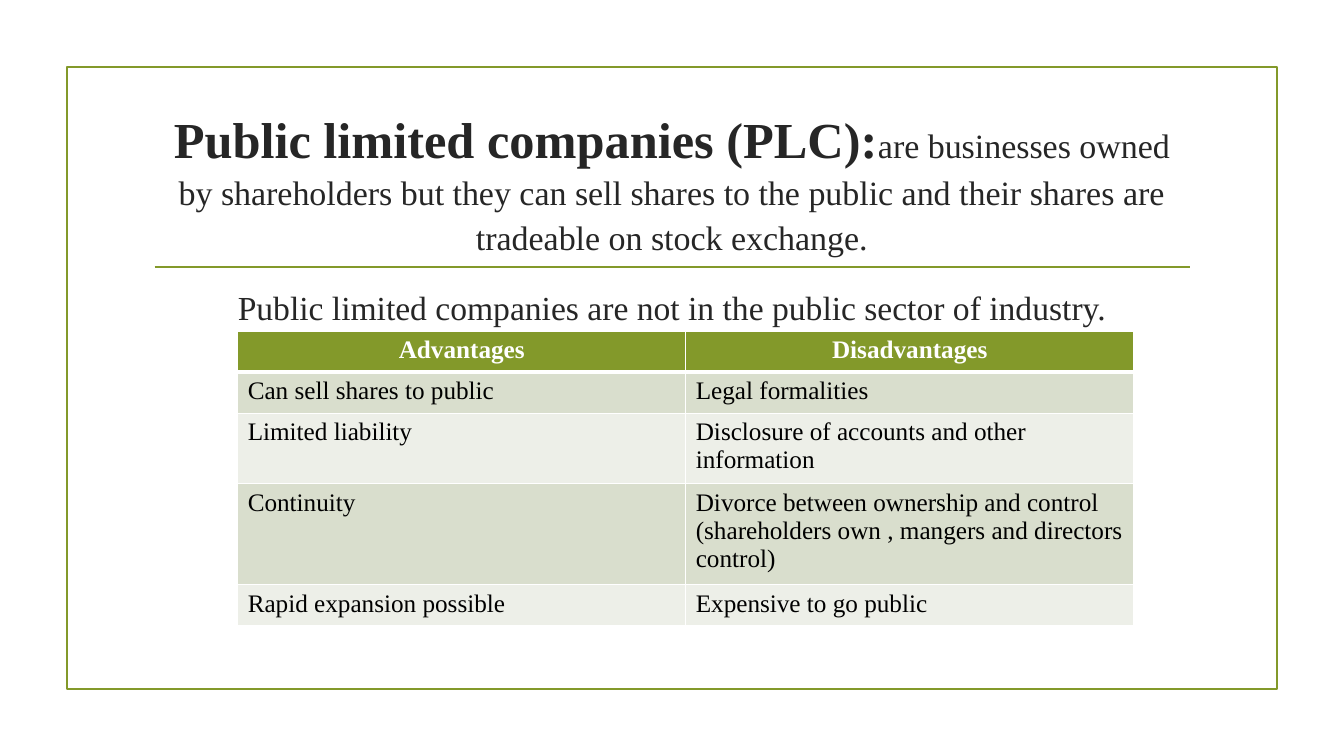
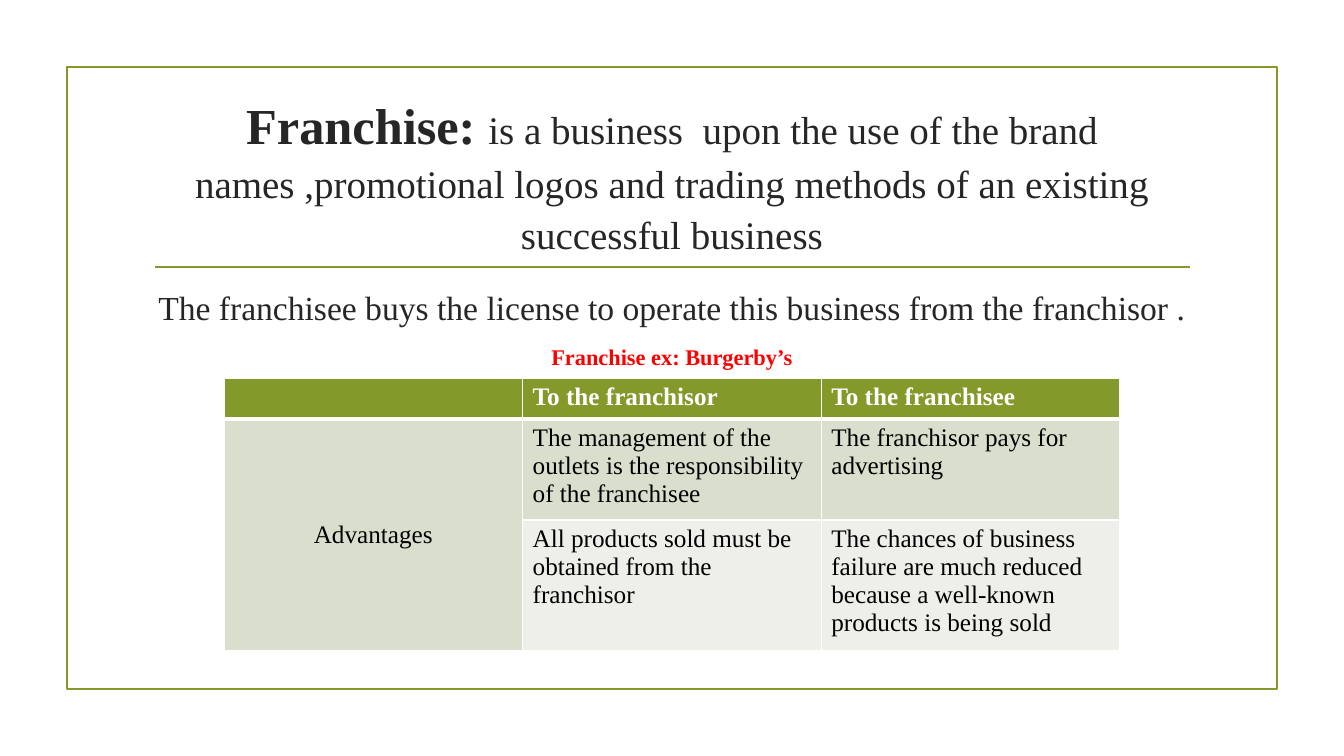
from dataclasses import dataclass
from lxml.etree import SubElement
from pptx import Presentation
from pptx.dml.color import RGBColor
from pptx.enum.shapes import MSO_CONNECTOR, MSO_SHAPE
from pptx.enum.text import MSO_ANCHOR, MSO_AUTO_SIZE, PP_ALIGN
from pptx.oxml.ns import qn
from pptx.util import Inches, Length, Pt

COLS, ROWS = 160, 90


@dataclass(frozen=True)
class Theme:
    font: str = "Times New Roman"
    green: str = "83992A"
    ink: str = "262626"
    cell_ink: str = "000000"
    white: str = "FFFFFF"
    red: str = "FF0000"
    bands: tuple[str, str] = ("D9DECD", "EDEFE8")
    term: float = 36
    body: float = 24
    cell: float = 18
    example: float = 16
    rule: float = 1.25
    grid_line: float = 1
    header_line: float = 3
    title_spacing: float = 1.09


@dataclass(frozen=True)
class Box:
    col: float
    row: float
    cols: float
    rows: float


@dataclass(frozen=True)
class Line:
    text: str
    size: float
    color: str
    bold: bool = False


@dataclass(frozen=True)
class Grid:
    col: float
    row: float
    heights: tuple[float, ...]
    cells: tuple[tuple[str, ...], ...]
    center_header: bool = False
    merge_first: bool = False


@dataclass(frozen=True)
class Topic:
    term: str
    meaning: str
    meaning_size: float
    lines: tuple[Line, ...]
    grid: Grid


T = Theme()
FRAME = Box(8, 8, 144, 74)
TITLE = Box(17.6, 11, 124.8, 20.2)
BODY = Box(17, 33.6, 126, 12)
RULE_ROW, RULE_START, RULE_END = 31.8, 18.4, 141.7
TABLE_COLS = 106.68
ONE, TWO, THREE, FOUR = 4.9, 7.9, 11.2, 14.5

TOPICS = (
    Topic(
        "Public limited companies (PLC):",
        "are businesses owned by shareholders but they can sell shares to the "
        "public and their shares are tradeable on stock exchange.",
        24.3,
        (Line("Public limited companies are not in the public sector of industry.",
              T.body, T.ink),),
        Grid(28.3, 39.4, (ONE, ONE, TWO, THREE, ONE), (
            ("Advantages", "Disadvantages"),
            ("Can sell shares to public", "Legal formalities"),
            ("Limited liability", "Disclosure of accounts and other information"),
            ("Continuity", "Divorce between ownership and control\n"
                           "(shareholders own , mangers and directors control)"),
            ("Rapid expansion possible", "Expensive to go public"),
        ), center_header=True),
    ),
    Topic(
        "Franchise: ",
        "is a business  upon the use of the brand names ,promotional logos and "
        "trading methods of an existing successful business",
        27.9,
        (Line("The franchisee buys the license to operate this business from "
              "the franchisor .", T.body, T.ink),
         Line("Franchise ex: Burgerby’s", T.example, T.red, True)),
        Grid(26.66, 45, (ONE, THREE, FOUR), (
            ("", "To the franchisor", "To the franchisee"),
            ("Advantages",
             "The management of the outlets is the responsibility of the franchisee",
             "The franchisor pays for advertising"),
            ("", "All products sold must be obtained from the franchisor",
             "The chances of business failure are much reduced because a "
             "well-known products is being sold"),
        ), merge_first=True),
    ),
)


def unit(n: float) -> Length:
    return Inches(n / 12)


def place(box: Box) -> tuple[Length, ...]:
    return tuple(unit(n) for n in (box.col, box.row, box.cols, box.rows))


def style(font, size: float, color: str, bold: bool = False) -> None:
    font.name, font.size, font.bold = T.font, Pt(size), bold
    font.color.rgb = RGBColor.from_string(color)


def draw_frame(s) -> None:
    sp = s.shapes.add_shape(MSO_SHAPE.RECTANGLE, *place(FRAME))
    sp.shadow.inherit = False
    sp.fill.background()
    rule = s.shapes.add_connector(MSO_CONNECTOR.STRAIGHT, unit(RULE_START),
                                  unit(RULE_ROW), unit(RULE_END), unit(RULE_ROW))
    SubElement(rule._element.spPr, qn("a:effectLst"))
    for line in (sp.line, rule.line):
        line.color.rgb = RGBColor.from_string(T.green)
        line.width = Pt(T.rule)


def draw_title(s, topic: Topic) -> None:
    sp = s.shapes.title
    sp.left, sp.top, sp.width, sp.height = place(TITLE)
    tf = sp.text_frame
    tf.word_wrap, tf.auto_size = True, MSO_AUTO_SIZE.NONE
    tf.vertical_anchor = MSO_ANCHOR.BOTTOM
    p = tf.paragraphs[0]
    p.alignment, p.line_spacing = PP_ALIGN.CENTER, T.title_spacing
    for text, size, bold in ((topic.term, T.term, True),
                             (topic.meaning, topic.meaning_size, False)):
        r = p.add_run()
        r.text = text
        style(r.font, size, T.ink, bold)


def draw_body(s, lines: tuple[Line, ...]) -> None:
    tf = s.shapes.add_textbox(*place(BODY)).text_frame
    tf.word_wrap = True
    tf.text = "\n".join(line.text for line in lines)
    for i, (p, line) in enumerate(zip(tf.paragraphs, lines)):
        p.alignment = PP_ALIGN.CENTER
        p.space_before, p.space_after = Pt(5 if i else 0), Pt(6)
        style(p.runs[0].font, line.size, line.color, line.bold)


def set_borders(cell, top: float, bottom: float) -> None:
    tc_pr = cell._tc.get_or_add_tcPr()
    widths = {"lnL": T.grid_line, "lnR": T.grid_line, "lnT": top, "lnB": bottom}
    for tag, width in widths.items():
        ln = SubElement(tc_pr, qn(f"a:{tag}"), w=str(Pt(width)))
        fill = SubElement(ln, qn("a:solidFill"))
        SubElement(fill, qn("a:srgbClr"), val=T.white)


def draw_table(s, grid: Grid) -> None:
    n_rows, n_cols = len(grid.cells), len(grid.cells[0])
    box = Box(grid.col, grid.row, TABLE_COLS, sum(grid.heights))
    table = s.shapes.add_table(n_rows, n_cols, *place(box)).table
    table.horz_banding = False
    for row, height in zip(table.rows, grid.heights):
        row.height = unit(height)
    for i, texts in enumerate(grid.cells):
        header = i == 0
        color = T.white if header else T.cell_ink
        for j, text in enumerate(texts):
            cell = table.cell(i, j)
            set_borders(cell, T.header_line if i == 1 else T.grid_line,
                        T.header_line if header else T.grid_line)
            cell.fill.solid()
            cell.fill.fore_color.rgb = RGBColor.from_string(
                T.green if header else T.bands[(i - 1) % 2])
            cell.text = text
            for p in cell.text_frame.paragraphs:
                style(p.font, T.cell, color, header)
                if header and grid.center_header:
                    p.alignment = PP_ALIGN.CENTER
                for r in p.runs:
                    style(r.font, T.cell, color, header)
    if grid.merge_first:
        label = table.cell(1, 0)
        label.merge(table.cell(n_rows - 1, 0))
        label.vertical_anchor = MSO_ANCHOR.MIDDLE
        label.text_frame.paragraphs[0].alignment = PP_ALIGN.CENTER


def main() -> None:
    prs = Presentation()
    prs.slide_width, prs.slide_height = unit(COLS), unit(ROWS)
    for topic in TOPICS:
        s = prs.slides.add_slide(prs.slide_layouts.get_by_name("Title Only"))
        draw_frame(s)
        draw_title(s, topic)
        draw_body(s, topic.lines)
        draw_table(s, topic.grid)
    prs.save("out.pptx")


if __name__ == "__main__":
    main()
